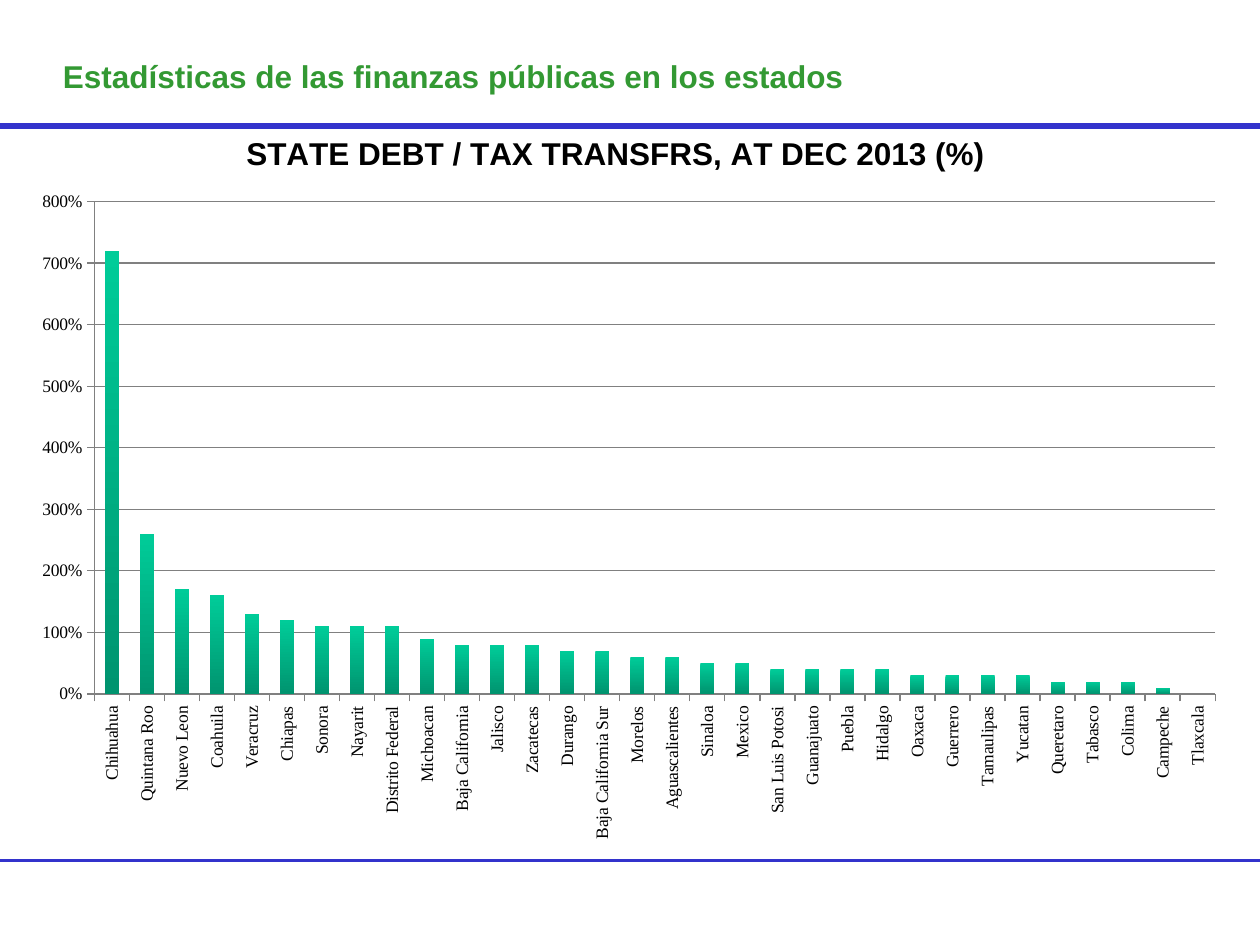
"""Build a slide with a column chart of state debt over tax transfers."""
from lxml import etree
from pptx import Presentation
from pptx.chart.data import CategoryChartData
from pptx.dml.color import RGBColor
from pptx.enum.chart import XL_CHART_TYPE as CT, XL_TICK_MARK as TM
from pptx.enum.shapes import MSO_CONNECTOR
from pptx.enum.text import MSO_ANCHOR
from pptx.oxml.ns import qn
from pptx.util import Cm, Pt

BLUE = RGBColor(0x33, 0x33, 0xCC)
GREEN = RGBColor(0x33, 0x99, 0x33)
TEAL = RGBColor(0x00, 0xCC, 0x99)
DARK_TEAL = RGBColor(0x00, 0x94, 0x6F)
GRAY = RGBColor(0x80, 0x80, 0x80)
BLACK = RGBColor(0, 0, 0)

DEBT = [
    ("Chihuahua", 7.2), ("Quintana Roo", 2.6), ("Nuevo Leon", 1.7),
    ("Coahuila", 1.6), ("Veracruz", 1.3), ("Chiapas", 1.2),
    ("Sonora", 1.1), ("Nayarit", 1.1), ("Distrito Federal", 1.1),
    ("Michoacan", 0.9), ("Baja California", 0.8), ("Jalisco", 0.8),
    ("Zacatecas", 0.8), ("Durango", 0.7), ("Baja California Sur", 0.7),
    ("Morelos", 0.6), ("Aguascalientes", 0.6), ("Sinaloa", 0.5),
    ("Mexico", 0.5), ("San Luis Potosi", 0.4), ("Guanajuato", 0.4),
    ("Puebla", 0.4), ("Hidalgo", 0.4), ("Oaxaca", 0.3),
    ("Guerrero", 0.3), ("Tamaulipas", 0.3), ("Yucatan", 0.3),
    ("Queretaro", 0.2), ("Tabasco", 0.2), ("Colima", 0.2),
    ("Campeche", 0.1), ("Tlaxcala", 0),
]


def set_font(font, name, size, color, bold=False):
    font.name, font.size, font.bold = name, Pt(size), bold
    font.color.rgb = color


def set_layout(parent, index, **values):
    for old in parent.findall(qn("c:layout")):
        parent.remove(old)
    layout = etree.Element(qn("c:layout"))
    parent.insert(index, layout)
    manual = etree.SubElement(layout, qn("c:manualLayout"))
    for tag, val in values.items():
        etree.SubElement(manual, qn("c:" + tag)).set("val", str(val))


prs = Presentation()
prs.slide_width, prs.slide_height = Cm(25.4), Cm(19.05)
s = prs.slides.add_slide(prs.slide_layouts[6])

for y, width in ((17.35, 1.5), (2.54, 3)):
    line = s.shapes.add_connector(MSO_CONNECTOR.STRAIGHT, 0, Cm(y), prs.slide_width, Cm(y))
    line.line.color.rgb = BLUE
    line.line.width = Pt(width)
    etree.SubElement(line._element.spPr, qn("a:effectLst"))

tf = s.shapes.add_textbox(Cm(1.02), Cm(0.81), Cm(20.12), Cm(1.45)).text_frame
tf.word_wrap = True
tf.vertical_anchor = MSO_ANCHOR.MIDDLE
p = tf.paragraphs[0]
p.text = "Estadísticas de las finanzas públicas en los estados"
set_font(p.font, "Arial", 18, GREEN, True)

data = CategoryChartData(number_format="0%")
data.categories = [state for state, ratio in DEBT]
data.add_series("Series 1", [ratio for state, ratio in DEBT])
chart = s.shapes.add_chart(
    CT.COLUMN_CLUSTERED, Cm(0.43), Cm(2.11), Cm(24.56), Cm(15.04), data).chart
set_font(chart.font, "Times New Roman", 10, BLACK)
chart.has_legend = False
chart.has_title = True
title = chart.chart_title
p = title.text_frame.paragraphs[0]
p.text = "STATE DEBT / TAX TRANSFRS, AT DEC 2013 (%)"
set_font(p.font, "Arial", 18, BLACK, True)
set_layout(title._element, 1, xMode="edge", yMode="edge", x=0.18, y=0.03)
set_layout(chart._chartSpace.chart.plotArea, 0, layoutTarget="inner", xMode="edge",
           yMode="edge", x=0.06, y=0.13, w=0.92, h=0.66)

plot = chart.plots[0]
plot.gap_width = 150
plot.vary_by_categories = False
fill = plot.series[0].format.fill
fill.gradient()
fill.gradient_angle = 270
for stop, color in zip(fill.gradient_stops, (TEAL, DARK_TEAL)):
    stop.color.rgb = color
fill.gradient_stops[0].position = 0
fill.gradient_stops[1].position = 1

cat, val = chart.category_axis, chart.value_axis
val.minimum_scale, val.maximum_scale, val.major_unit = 0, 8, 1
val.has_major_gridlines = True
val.tick_labels.number_format = "0%"
val.tick_labels.number_format_is_linked = False
val.major_gridlines.format.line.color.rgb = GRAY
val.major_gridlines.format.line.width = Pt(0.75)
for axis in (cat, val):
    axis.major_tick_mark = TM.OUTSIDE
    axis.format.line.color.rgb = GRAY
    axis.format.line.width = Pt(0.75)
    set_font(axis.tick_labels.font, "Times New Roman", 10, BLACK)
body = cat._element.find(qn("c:txPr")).find(qn("a:bodyPr"))
body.set("rot", "-5400000")
body.set("vert", "horz")

prs.save("out.pptx")
